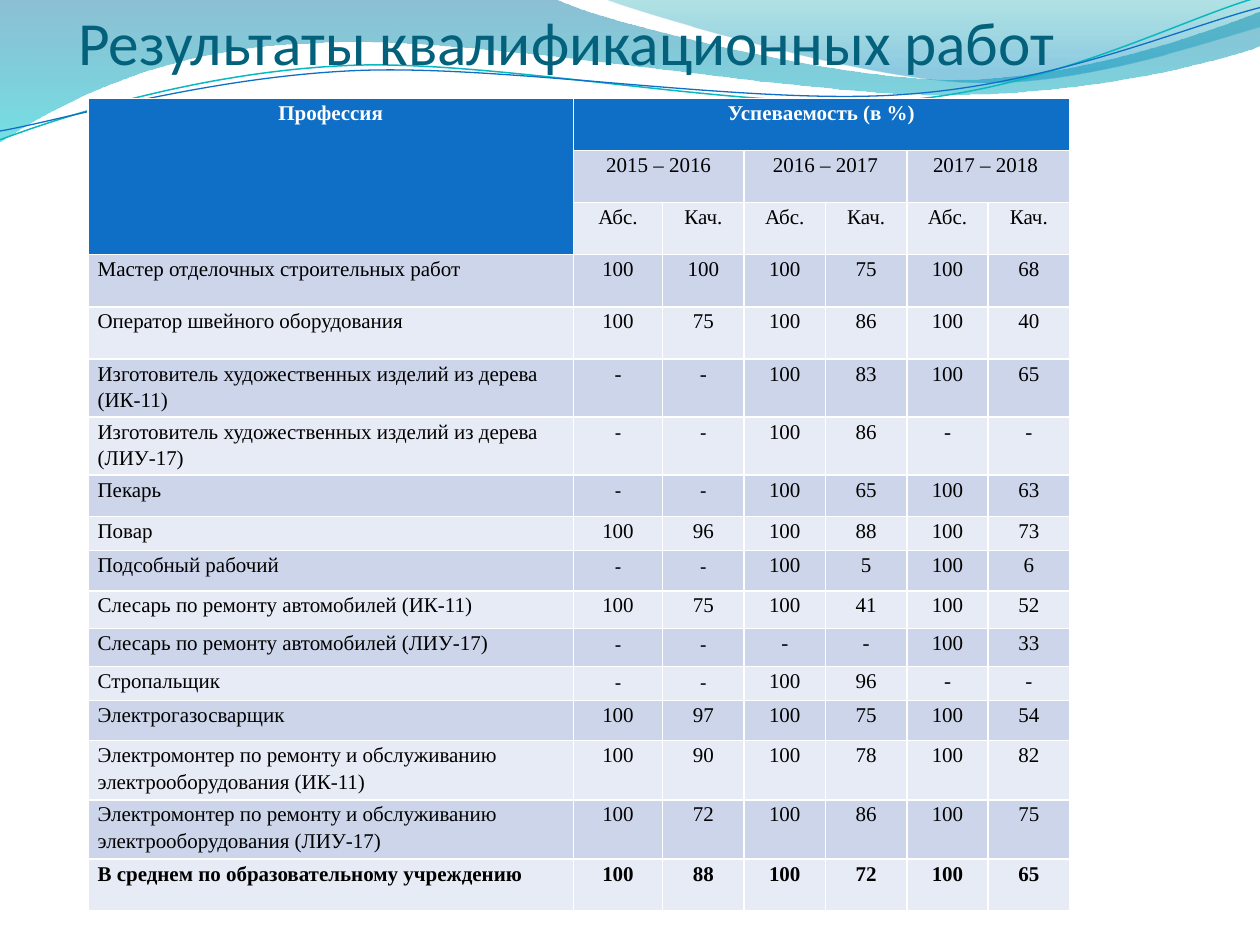
from math import cos, radians, sin

from lxml import etree
from pptx import Presentation
from pptx.dml.color import RGBColor
from pptx.enum.text import MSO_ANCHOR, PP_ALIGN
from pptx.oxml.ns import qn
from pptx.util import Inches, Pt

CENTER, LEFT = PP_ALIGN.CENTER, PP_ALIGN.LEFT
BOTTOM = MSO_ANCHOR.BOTTOM
TITLE_FONT, TABLE_FONT = "Calibri", "Times New Roman"
BLANK = 6
LINE_TILT = 357.3

COLORS = {
    "title": "04617B", "header": "0F6FC6", "odd": "CCD5EA", "even": "E7EBF5",
    "white": "FFFFFF", "black": "000000", "teal_line": "0AB8BF", "blue_line": "0F6FC6",
    "wave_blue": "0074A1", "wave_cyan": "00C6CF",
    "crest_green": "00A1A9", "crest_blue": "008BBF",
}

# Outlines in inches on the slide: a pair is a straight step, six numbers are a Bezier curve.
WAVE = [(0, 0), (4.4, -0.01), (4.76, 0.17, 6.64, 0.63, 7.58, 0.63),
        (8.53, 0.63, 9.58, 0.26, 10, 0.09), (10.01, 0.36),
        (9.83, 0.44, 8.7, 0.76, 7.46, 0.75), (6.22, 0.75, 3.82, 0.28, 2.57, 0.34),
        (1.29, 0.36, 0.46, 0.83, -0.01, 1.13), (0, 0)]
CREST = [(4.79, -0.01), (5.09, 0.11, 6.82, 0.62, 7.69, 0.65),
         (8.56, 0.69, 9.61, 0.32, 10, 0.21), (10, 0), (4.79, -0.01)]
TEAL_LINE = [(0, 1.11), (0.48, 0.93, 1.58, 0.57, 2.77, 0.52),
             (3.95, 0.47, 5.93, 0.89, 7.13, 0.8), (8.33, 0.71, 9.38, 0.15, 9.98, -0.02)]
BLUE_LINE = [(0, 1.04), (0.47, 0.96, 1.64, 0.61, 2.83, 0.56),
             (4.03, 0.51, 5.97, 0.84, 7.17, 0.75), (8.36, 0.67, 9.41, 0.21, 10, 0.06)]

YEARS = ["2015 – 2016", "2016 – 2017", "2017 – 2018 "]
MEASURES = ["Абс.", "Кач."]
RESULTS = [
    ("Мастер отделочных строительных работ", "100 100 100 75 100 68"),
    ("Оператор швейного оборудования", "100 75 100 86 100 40"),
    ("Изготовитель художественных изделий из дерева (ИК-11)", "- - 100 83 100 65"),
    ("Изготовитель художественных изделий из дерева (ЛИУ-17)", "- - 100 86 - -"),
    ("Пекарь", "- - 100 65 100 63"),
    ("Повар", "100 96 100 88 100 73"),
    ("Подсобный рабочий", "- - 100 5 100 6"),
    ("Слесарь по ремонту автомобилей (ИК-11)", "100 75 100 41 100 52"),
    ("Слесарь по ремонту автомобилей (ЛИУ-17)", "- - - - 100 33"),
    ("Стропальщик", "- - 100 96 - -"),
    ("Электрогазосварщик", "100 97 100 75 100 54"),
    ("Электромонтер по ремонту и обслуживанию электрооборудования (ИК-11)",
     "100 90 100 78 100 82"),
    ("Электромонтер по ремонту и обслуживанию электрооборудования (ЛИУ-17)",
     "100 72 100 86 100 75"),
    ("В среднем по образовательному учреждению", "100 88 100 72 100 65"),
]
HEADER_ROWS = 3
COL_WIDTHS = [3.85, 0.71] + [3.23 / 5] * 5
ROW_HEIGHTS = [2.07 / 5] * 5 + [0.4, 0.34, 0.33, 0.27, 0.32, 0.3, 0.3, 0.27, 0.32,
                                0.47, 0.47, 0.41]
CELL_INSET = 5.4 / 72


def rgb(name):
    return RGBColor.from_string(COLORS[name])


def add_outline(s, outline, x, y, w, h, tilt=0, close=False):
    """Add a curved shape in the given box, turned back by tilt before it is rotated."""
    builder = s.shapes.build_freeform(Inches(x), Inches(y))
    builder.add_line_segments([(Inches(x + w), Inches(y + h))], close=close)
    sp = builder.convert_to_shape()
    sp.shadow.inherit = False
    sp.rotation = tilt
    cx, cy = x + w / 2, y + h / 2
    c, d = cos(radians(-tilt)), sin(radians(-tilt))

    path = sp.element.spPr.find(".//" + qn("a:path"))
    for child in list(path):
        path.remove(child)
    for i, step in enumerate(outline):
        tag = "a:moveTo" if i == 0 else "a:lnTo" if len(step) == 2 else "a:cubicBezTo"
        segment = etree.SubElement(path, qn(tag))
        for px, py in zip(step[::2], step[1::2]):
            dx, dy = px - cx, py - cy
            etree.SubElement(segment, qn("a:pt"), x=str(Inches(dx * c - dy * d + w / 2)),
                             y=str(Inches(dx * d + dy * c + h / 2)))
    if close:
        etree.SubElement(path, qn("a:close"))
    return sp


def add_wave(s, outline, box, stops):
    """Draw a filled wave; each stop is (position, color, opacity in percent)."""
    sp = add_outline(s, outline, *box, close=True)
    sp.line.fill.background()
    sp.fill.gradient()
    sp.fill.gradient_angle = 270
    for stop, (position, color, opacity) in zip(sp.fill.gradient_stops, stops):
        stop.position = position
        stop.color.rgb = rgb(color)
    clrs = sp.element.spPr.find(qn("a:gradFill")).iter(qn("a:srgbClr"))
    for clr, (position, color, opacity) in zip(clrs, stops):
        etree.SubElement(clr, qn("a:alpha")).set("val", str(opacity * 1000))


def add_curve(s, outline, box, color, width):
    sp = add_outline(s, outline, *box, tilt=LINE_TILT)
    sp.fill.background()
    sp.line.color.rgb = rgb(color)
    sp.line.width = Pt(width)


def add_background(s):
    add_wave(s, WAVE, (-0.01, -0.01, 10.02, 1.14), [(0, "wave_blue", 45), (1, "wave_cyan", 55)])
    add_wave(s, CREST, (4.79, -0.01, 5.21, 0.7),
             [(0, "crest_green", 30), (0.8, "crest_blue", 45)])
    add_curve(s, TEAL_LINE, (-0.02, 0.22, 10.02, 0.71), "teal_line", 0.85)
    add_curve(s, BLUE_LINE, (-0.02, 0.3, 10.03, 0.58), "blue_line", 0.75)


def add_run(p, text, font, size, color, bold=False):
    r = p.add_run()
    r.text = text
    r.font.name = font
    r.font.size = Pt(size)
    r.font.bold = bold
    r.font.color.rgb = rgb(color)


def add_title(s, x, y, w, h):
    tf = s.shapes.add_textbox(Inches(x), Inches(y), Inches(w), Inches(h)).text_frame
    tf.word_wrap = True
    tf.vertical_anchor = BOTTOM
    tf.margin_left = tf.margin_right = tf.margin_bottom = 0
    tf.margin_top = Inches(0.05)
    add_run(tf.paragraphs[0], "Результаты квалификационных работ", TITLE_FONT, 35, "title")


def write_cell(cell, text, align=CENTER, font=TABLE_FONT, color="black", bold=False):
    p = cell.text_frame.paragraphs[0]
    p.alignment = align
    p.line_spacing = 1.15
    p.space_before = p.space_after = Pt(0)
    add_run(p, text, font, 12, color, bold)
    etree.SubElement(p._p, qn("a:endParaRPr"), sz="1200")


def add_results_table(s, x, y):
    """Add the table; its white borders come from the default table style."""
    tbl = s.shapes.add_table(len(ROW_HEIGHTS), len(COL_WIDTHS), Inches(x), Inches(y),
                             Inches(sum(COL_WIDTHS)), Inches(sum(ROW_HEIGHTS))).table
    for column, width in zip(tbl.columns, COL_WIDTHS):
        column.width = Inches(width)
    for i, height in enumerate(ROW_HEIGHTS):
        tbl.rows[i].height = Inches(height)
        for j in range(len(COL_WIDTHS)):
            cell = tbl.cell(i, j)
            is_header = i == 0 or (j == 0 and i < HEADER_ROWS)
            cell.margin_left = cell.margin_right = Inches(CELL_INSET)
            cell.margin_top = cell.margin_bottom = 0
            cell.fill.solid()
            cell.fill.fore_color.rgb = rgb("header" if is_header else "odd" if i % 2 else "even")

    tbl.cell(0, 0).merge(tbl.cell(HEADER_ROWS - 1, 0))
    tbl.cell(0, 1).merge(tbl.cell(0, len(COL_WIDTHS) - 1))
    write_cell(tbl.cell(0, 0), "Профессия", color="white", bold=True)
    write_cell(tbl.cell(0, 1), "Успеваемость (в %)", color="white", bold=True)
    for k, year in enumerate(YEARS):
        j = 1 + 2 * k
        tbl.cell(1, j).merge(tbl.cell(1, j + 1))
        write_cell(tbl.cell(1, j), year)
        for m, measure in enumerate(MEASURES):
            write_cell(tbl.cell(2, j + m), measure)

    for i, (trade, values) in enumerate(RESULTS, HEADER_ROWS):
        bold = i == len(ROW_HEIGHTS) - 1
        write_cell(tbl.cell(i, 0), trade, LEFT, bold=bold)
        for j, value in enumerate(values.split(), 1):
            # First-year dashes below the first woodwork row use the title font.
            font = TITLE_FONT if value == "-" and j < 3 and i > 5 else TABLE_FONT
            write_cell(tbl.cell(i, j), value, font=font, bold=bold)


def main():
    prs = Presentation()
    prs.slide_width, prs.slide_height = Inches(10), Inches(7.5)
    s = prs.slides.add_slide(prs.slide_layouts[BLANK])
    add_background(s)
    add_title(s, 0.62, 0, 9.22, 0.62)
    add_results_table(s, 0.7, 0.78)
    prs.save("out.pptx")


if __name__ == "__main__":
    main()
